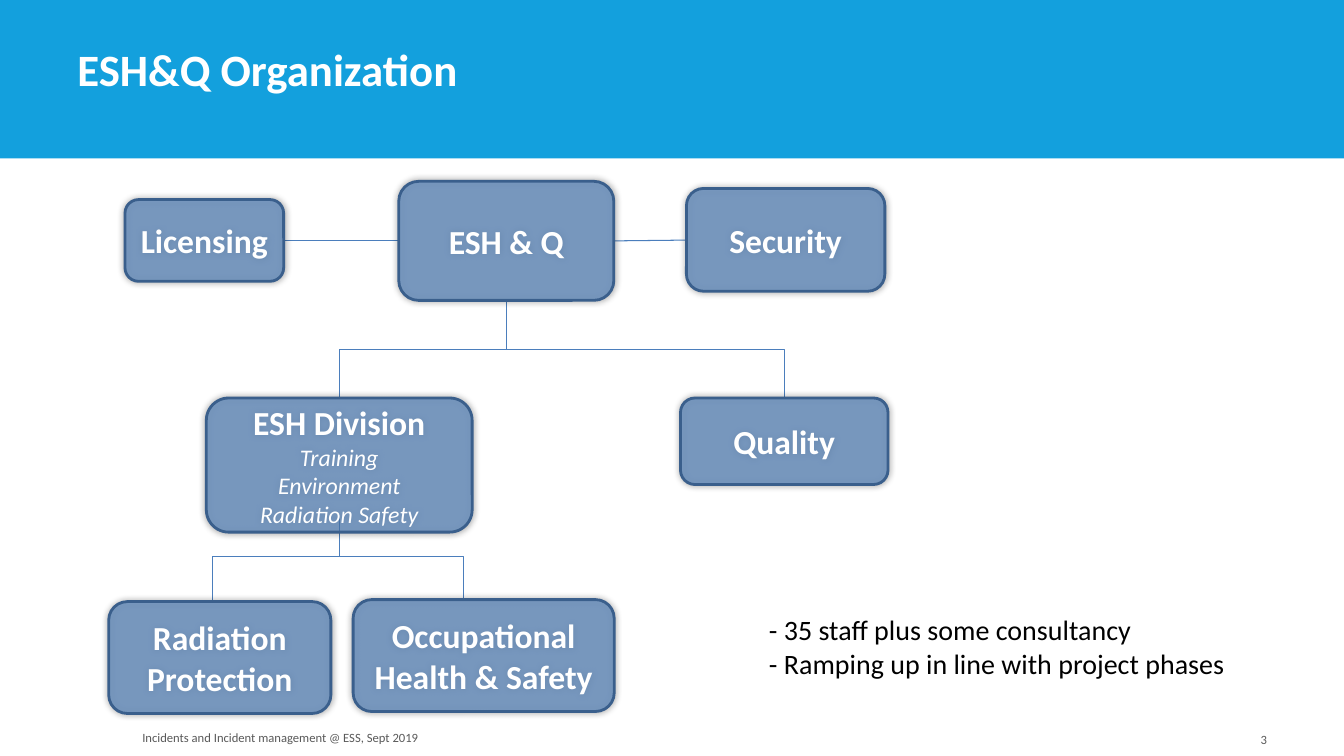
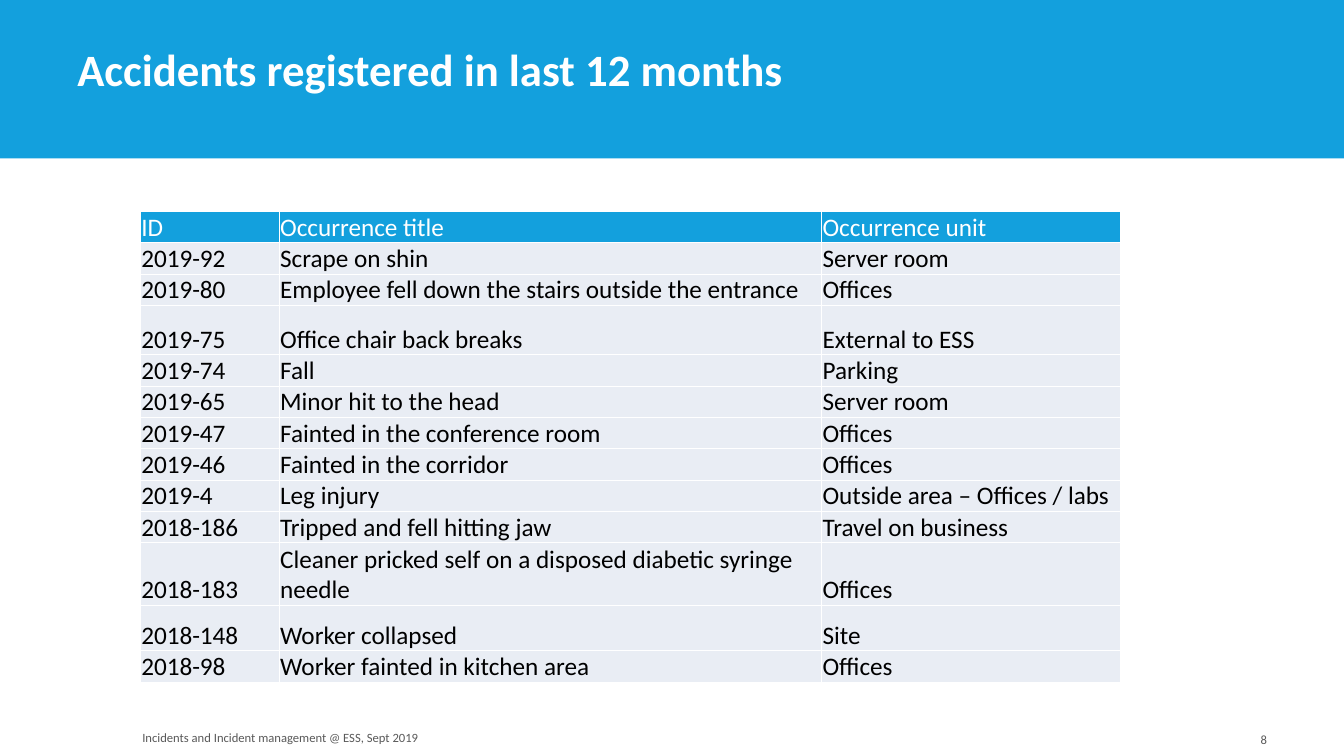
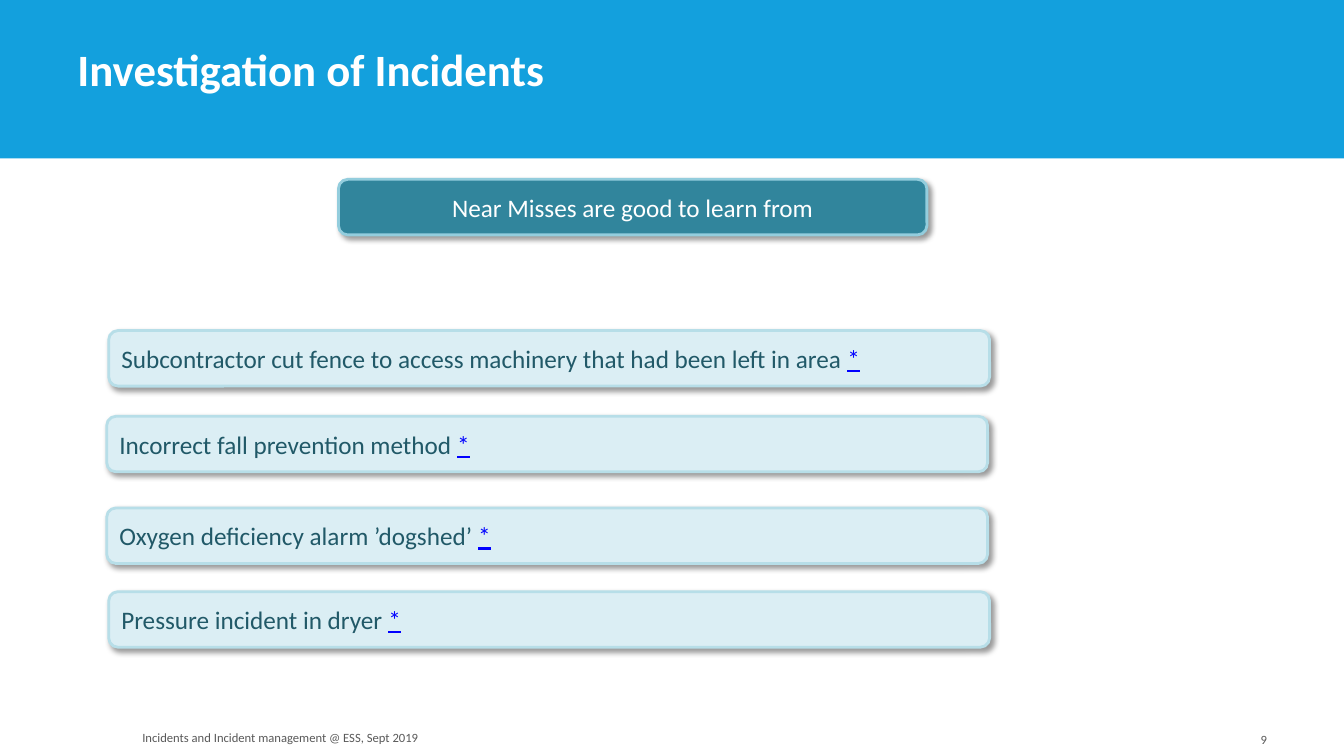
import pptx
import pptx.util
import pptx.dml.color
import pptx.enum.shapes
import pptx.enum.text
import pptx.oxml
import pptx.oxml.ns
from pptx.util import Cm

RGBColor = pptx.dml.color.RGBColor
SHAPE = pptx.enum.shapes.MSO_SHAPE
CONNECTOR = pptx.enum.shapes.MSO_CONNECTOR
ALIGN = pptx.enum.text.PP_ALIGN
ANCHOR = pptx.enum.text.MSO_ANCHOR
NS = pptx.oxml.ns.nsdecls("a")

FONT = "Calibri"
WHITE = RGBColor(0xFF, 0xFF, 0xFF)
BLACK = RGBColor(0x00, 0x00, 0x00)
SKY = RGBColor(0x13, 0xA0, 0xDD)
GREY = RGBColor(0x59, 0x59, 0x59)
UNIT_FILL = RGBColor(0x4F, 0x81, 0xBD)
UNIT_LINE = RGBColor(0x3A, 0x5F, 0x8C)
LINK_LINE = RGBColor(0x4B, 0x7E, 0xBC)
ROW_FILL = RGBColor(0xE9, 0xED, 0xF4)
BANNER_FILL = RGBColor(0x31, 0x85, 0x9C)
BANNER_LINE = RGBColor(0x93, 0xCD, 0xDD)
CASE_FILL = RGBColor(0xDB, 0xEE, 0xF4)
CASE_LINE = RGBColor(0xB7, 0xDE, 0xE8)
CASE_TEXT = RGBColor(0x21, 0x59, 0x68)
MARK = RGBColor(0x00, 0x00, 0xFF)


def write(tf, text, size=18, color=BLACK, bold=False, italic=False,
          underline=False, align=ALIGN.LEFT, anchor=None, same_line=False):
    """Add text as a new paragraph, or as a run on the last one."""
    p = tf.paragraphs[-1]
    if p.runs and not same_line:
        p = tf.add_paragraph()
    p.alignment = align
    tf.word_wrap = True
    if anchor is not None:
        tf.vertical_anchor = anchor
    r = p.add_run()
    r.text = text
    r.font.name = FONT
    r.font.size = pptx.util.Pt(size)
    r.font.color.rgb = color
    r.font.bold = bold
    r.font.italic = italic
    r.font.underline = underline


def rounded_box(s, x, y, w, h, fill, line, blur, dist=0, angle=0, opacity=100):
    """Add a rounded box with a soft shadow and return its text frame."""
    sp = s.shapes.add_shape(SHAPE.ROUNDED_RECTANGLE, Cm(x), Cm(y), Cm(w), Cm(h))
    sp.fill.solid()
    sp.fill.fore_color.rgb = fill
    if opacity < 100:
        color = sp._element.spPr.find(".//" + pptx.oxml.ns.qn("a:srgbClr"))
        color.append(pptx.oxml.parse_xml(f'<a:alpha {NS} val="{opacity * 1000}"/>'))
    sp.line.color.rgb = line
    sp.line.width = pptx.util.Pt(2)
    sp._element.spPr.append(pptx.oxml.parse_xml(
        f'<a:effectLst {NS}><a:outerShdw blurRad="{blur * 12700}" dist="{dist * 12700}" '
        f'dir="{angle * 60000}" rotWithShape="0"><a:srgbClr val="000000">'
        '<a:alpha val="40000"/></a:srgbClr></a:outerShdw></a:effectLst>'))
    return sp.text_frame


prs = pptx.Presentation()
prs.slide_width, prs.slide_height = Cm(33.87), Cm(19.05)

# Band, title, number and footer of every slide
FOOTER = "Incidents and Incident management @ ESS, Sept 2019"
slides = []
for title, number in [("ESH&Q Organization", "3"),
                      ("Accidents registered in last 12 months", "8"),
                      ("Investigation of Incidents", "9")]:
    s = prs.slides.add_slide(prs.slide_layouts[6])
    slides.append(s)
    band = s.shapes.add_shape(SHAPE.RECTANGLE, 0, 0, prs.slide_width, Cm(3.99))
    band.shadow.inherit = False
    band.fill.solid()
    band.fill.fore_color.rgb = SKY
    band.line.fill.background()
    for text, x, y, w, h, fmt in [
            (title, 1.7, 0.97, 26.44, 1.55, dict(size=32, color=WHITE, bold=True)),
            (number, 24.28, 17.93, 7.9, 1.02, dict(size=9, color=GREY, align=ALIGN.RIGHT)),
            (FOOTER, 1.7, 17.88, 10.72, 1.02, dict(size=9, color=GREY, align=ALIGN.CENTER))]:
        tb = s.shapes.add_textbox(Cm(x), Cm(y), Cm(w), Cm(h))
        write(tb.text_frame, text, anchor=ANCHOR.BOTTOM, **fmt)
org, accidents, incidents = slides

# Organization: connectors, vertical elbows being turned a quarter
for x1, y1, x2, y2 in [(12.76, 7.57, 8.55, 10.03), (12.76, 7.57, 19.77, 10.03),
                       (8.55, 12.95, 5.36, 15.11), (8.55, 12.95, 11.68, 15.11),
                       (17.3, 6.05, 15.45, 6.07), (10.05, 6.07, 7.12, 6.07)]:
    if y2 - y1 > 1:
        cx, cy = (x1 + x2) / 2, (y1 + y2) / 2
        dx, dy = abs(x2 - x1) / 2, (y2 - y1) / 2
        side, turn = (-1, 90) if x2 < x1 else (1, 270)
        c = org.shapes.add_connector(CONNECTOR.ELBOW, Cm(cx + side * dy), Cm(cy - dx),
                                     Cm(cx - side * dy), Cm(cy + dx))
        c._element.spPr.find(pptx.oxml.ns.qn("a:xfrm")).set("rot", str(turn * 60000))
    else:
        c = org.shapes.add_connector(CONNECTOR.STRAIGHT, Cm(x1), Cm(y1), Cm(x2), Cm(y2))
    c.line.color.rgb = LINK_LINE
    c.line.width = pptx.util.Pt(0.75)
    c._element.spPr.append(pptx.oxml.parse_xml(f"<a:effectLst {NS}/>"))

# Organization: units
for name, x, y, w, h, topics in [
        ("ESH Division", 5.2, 10.03, 6.7, 3.38,
         ["Training", "Environment", "Radiation Safety"]),
        ("Security", 17.3, 4.75, 5, 2.59, []),
        ("ESH & Q", 10.05, 4.57, 5.42, 3, []),
        ("Quality", 17.15, 10.03, 5.23, 2.18, []),
        ("Occupational Health & Safety", 8.9, 15.11, 6.58, 2.82, []),
        ("Radiation Protection", 2.74, 15.16, 5.6, 2.82, []),
        ("Licensing", 3.15, 5.03, 4, 2.06, [])]:
    tf = rounded_box(org, x, y, w, h, UNIT_FILL, UNIT_LINE, blur=5, opacity=64)
    write(tf, name, size=24, color=WHITE, bold=True, align=ALIGN.CENTER, anchor=ANCHOR.MIDDLE)
    for topic in topics:
        write(tf, topic, size=17, color=WHITE, italic=True, align=ALIGN.CENTER)

# Organization: staffing
tb = org.shapes.add_textbox(Cm(19.13), Cm(15.32), Cm(12.8), Cm(2.2))
for text in ["- 35 staff plus some consultancy", "- Ramping up in line with project phases"]:
    write(tb.text_frame, text, size=20)

# Accidents: table
ROW = 0.79
rows = [
    (ROW, "ID", "Occurrence title", "Occurrence unit"),
    (ROW, "2019-92", "Scrape on shin", "Server room"),
    (ROW, "2019-80", "Employee fell down the stairs outside the entrance", "Offices"),
    (1.24, "2019-75", "Office chair back breaks", "External to ESS"),
    (ROW, "2019-74", "Fall", "Parking"),
    (ROW, "2019-65", "Minor hit to the head", "Server room"),
    (ROW, "2019-47", "Fainted in the conference room", "Offices"),
    (ROW, "2019-46", "Fainted in the corridor", "Offices"),
    (ROW, "2019-4", "Leg injury", "Outside area – Offices / labs"),
    (ROW, "2018-186", "Tripped and fell hitting jaw", "Travel on business"),
    (2 * ROW, "2018-183", "Cleaner pricked self on a disposed diabetic syringe needle", "Offices"),
    (1.14, "2018-148", "Worker collapsed", "Site"),
    (ROW, "2018-98", "Worker fainted in kitchen area", "Offices"),
]
widths = [3.5, 13.67, 7.52]
tbl = accidents.shapes.add_table(len(rows), len(widths), Cm(3.54), Cm(5.33), Cm(sum(widths)),
                                 Cm(sum(row[0] for row in rows))).table
for col, width in zip(tbl.columns, widths):
    col.width = Cm(width)
for i, (height, *texts) in enumerate(rows):
    tbl.rows[i].height = Cm(height)
    for j, text in enumerate(texts):
        cell = tbl.cell(i, j)
        cell.margin_left = cell.margin_right = cell.margin_top = Cm(0.02)
        cell.margin_bottom = 0
        cell.vertical_anchor = ANCHOR.BOTTOM
        for edge in ("lnL", "lnR", "lnT", "lnB"):
            cell._tc.get_or_add_tcPr().append(pptx.oxml.parse_xml(
                f'<a:{edge} {NS} w="12700"><a:solidFill><a:srgbClr val="{WHITE}"/>'
                f'</a:solidFill></a:{edge}>'))
        cell.fill.solid()
        cell.fill.fore_color.rgb = ROW_FILL if i else SKY
        write(cell.text_frame, text, color=BLACK if i else WHITE)

# Incidents: banner and cases
soft = dict(blur=4, dist=3, angle=45)
tf = rounded_box(incidents, 8.53, 4.52, 14.83, 1.4, BANNER_FILL, BANNER_LINE, **soft)
write(tf, "Near Misses are good to learn from", color=WHITE, align=ALIGN.CENTER,
      anchor=ANCHOR.MIDDLE)
for text, x, y in [
        ("Subcontractor cut fence to access machinery that had been left in area ", 2.74, 8.33),
        ("Incorrect fall prevention method ", 2.69, 10.49),
        ("Oxygen deficiency alarm ’dogshed’ ", 2.69, 12.8),
        ("Pressure incident in dryer ", 2.74, 14.91)]:
    tf = rounded_box(incidents, x, y, 22.2, 1.4, CASE_FILL, CASE_LINE, **soft)
    write(tf, text, color=CASE_TEXT, anchor=ANCHOR.MIDDLE)
    write(tf, "*", color=MARK, underline=True, same_line=True)

prs.save("out.pptx")
